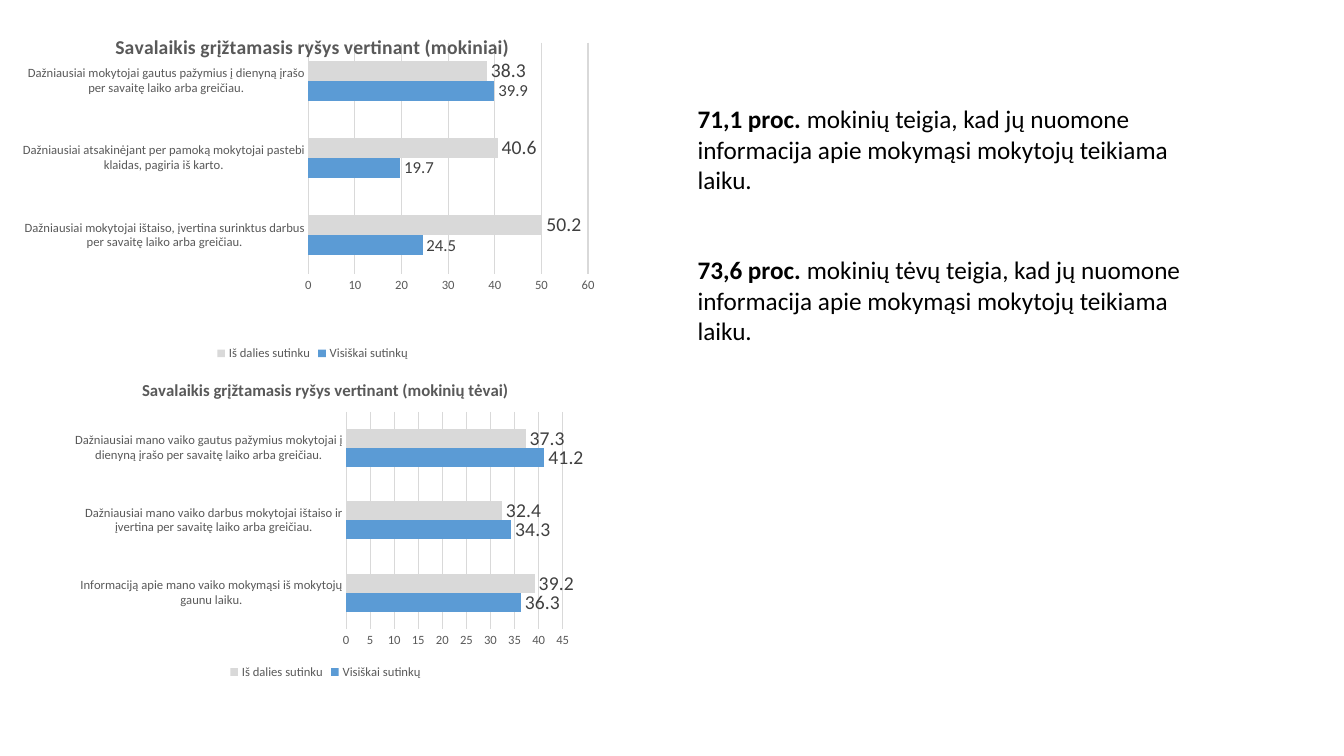
from lxml.etree import SubElement
from pptx import Presentation
from pptx.chart.data import CategoryChartData
from pptx.dml.color import RGBColor
from pptx.enum.chart import XL_CHART_TYPE, XL_LABEL_POSITION, XL_LEGEND_POSITION, XL_TICK_MARK
from pptx.enum.text import MSO_AUTO_SIZE
from pptx.oxml.ns import qn
from pptx.util import Inches, Pt

FONT = "Calibri"
COLORS = {
    "full": "5B9BD5",
    "partial": "D9D9D9",
    "grid": "D9D9D9",
    "axis_text": "595959",
    "label": "404040",
    "text": "000000",
}
STUDENT_CHART = {
    "box": (0.13, 0.17, 5.94, 3.45),
    "title": "Savalaikis grįžtamasis ryšys vertinant (mokiniai)",
    "title_size": 14,
    "plot": (0.493, 0.073, 0.467, 0.665),
    "scale": (60, 10),
    "categories": [
        "Dažniausiai mokytojai ištaiso, įvertina surinktus darbus per savaitę laiko arba greičiau.",
        "Dažniausiai atsakinėjant per pamoką mokytojai pastebi klaidas, pagiria iš karto.",
        "Dažniausiai mokytojai gautus pažymius į dienyną įrašo per savaitę laiko arba greičiau.",
    ],
    "series": [
        ("Visiškai sutinkų", (24.5, 19.7, 39.9), "full", 12),
        ("Iš dalies sutinku", (50.2, 40.6, 38.3), "partial", 14),
    ],
}
PARENT_CHART = {
    "box": (0.67, 3.61, 5.12, 3.17),
    "title": "Savalaikis grįžtamasis ryšys vertinant (mokinių tėvai)",
    "title_size": 12,
    "plot": (0.54, 0.15, 0.42, 0.68),
    "scale": (45, 5),
    "categories": [
        "Informaciją apie mano vaiko mokymąsi iš mokytojų gaunu laiku.",
        "Dažniausiai mano vaiko darbus mokytojai ištaiso ir įvertina per savaitę laiko arba greičiau.",
        "Dažniausiai mano vaiko gautus pažymius mokytojai į dienyną įrašo per savaitę laiko arba greičiau.",
    ],
    "series": [
        ("Visiškai sutinkų", (36.3, 34.3, 41.2), "full", 14),
        ("Iš dalies sutinku", (39.2, 32.4, 37.3), "partial", 14),
    ],
}
FINDINGS = [
    ("71,1 proc. ", "mokinių teigia, kad jų nuomone informacija apie mokymąsi mokytojų teikiama laiku."),
    ("73,6 proc. ", "mokinių tėvų teigia, kad jų nuomone informacija apie mokymąsi mokytojų teikiama laiku."),
]


def color(name):
    return RGBColor.from_string(COLORS[name])


def style_font(font, size, color_name, bold=False):
    font.name = FONT
    font.size = Pt(size)
    font.bold = bold
    font.color.rgb = color(color_name)


def style_line(line, color_name):
    line.color.rgb = color(color_name)
    line.width = Pt(0.75)


def place_plot(chart, plot):
    plot_area = chart.element.find(f".//{qn('c:plotArea')}")
    layout = plot_area.find(qn("c:layout"))
    if layout is None:
        layout = SubElement(plot_area, qn("c:layout"))
        plot_area.insert(0, layout)
    manual = SubElement(layout, qn("c:manualLayout"))
    settings = [("layoutTarget", "inner"), ("xMode", "edge"), ("yMode", "edge")]
    for tag, value in settings + list(zip("xywh", plot)):
        SubElement(manual, qn(f"c:{tag}")).set("val", str(value))


def style_axes(chart, scale):
    categories, values = chart.category_axis, chart.value_axis
    for axis in (categories, values):
        axis.major_tick_mark = axis.minor_tick_mark = XL_TICK_MARK.NONE
        style_font(axis.tick_labels.font, 9, "axis_text")
    style_line(categories.format.line, "grid")
    values.format.line.fill.background()
    values.has_major_gridlines = True
    style_line(values.major_gridlines.format.line, "grid")
    values.minimum_scale = 0
    values.maximum_scale, values.major_unit = scale


def add_survey_chart(page, survey):
    data = CategoryChartData(number_format="General")
    data.categories = survey["categories"]
    for name, values, _, _ in survey["series"]:
        data.add_series(name, values)
    box = map(Inches, survey["box"])
    chart = page.shapes.add_chart(XL_CHART_TYPE.BAR_CLUSTERED, *box, data).chart
    style_font(chart.font, 10, "text")
    chart.has_title = True
    title = chart.chart_title.text_frame
    title.text = survey["title"]
    style_font(title.paragraphs[0].runs[0].font, survey["title_size"], "axis_text", True)
    chart.has_legend = True
    chart.legend.position = XL_LEGEND_POSITION.BOTTOM
    chart.legend.include_in_layout = False
    style_font(chart.legend.font, 9, "axis_text")
    style_axes(chart, survey["scale"])
    place_plot(chart, survey["plot"])
    plot = chart.plots[0]
    plot.gap_width = 182
    plot.overlap = 0
    plot.vary_by_categories = False
    for series, (_, _, fill, label_size) in zip(plot.series, survey["series"]):
        series.format.fill.solid()
        series.format.fill.fore_color.rgb = color(fill)
        labels = series.data_labels
        labels.show_value = True
        labels.position = XL_LABEL_POSITION.OUTSIDE_END
        style_font(labels.font, label_size, "label")


def add_findings(page):
    box = page.shapes.add_textbox(Inches(6.82), Inches(0.98), Inches(5.06), Inches(2.52))
    frame = box.text_frame
    frame.word_wrap = True
    frame.auto_size = MSO_AUTO_SIZE.SHAPE_TO_FIT_TEXT
    for index, parts in enumerate(FINDINGS):
        para = frame.add_paragraph() if index else frame.paragraphs[0]
        if index:
            para.space_before = Pt(43)
        for text, bold in zip(parts, (True, False)):
            span = para.add_run()
            span.text = text
            style_font(span.font, 18, "text", bold)


def main():
    """Build the survey slide with two charts and their findings."""
    deck = Presentation()
    deck.slide_width, deck.slide_height = Inches(13.33), Inches(7.5)
    page = deck.slides.add_slide(deck.slide_layouts[6])
    for survey in (STUDENT_CHART, PARENT_CHART):
        add_survey_chart(page, survey)
    add_findings(page)
    deck.save("out.pptx")


if __name__ == "__main__":
    main()
